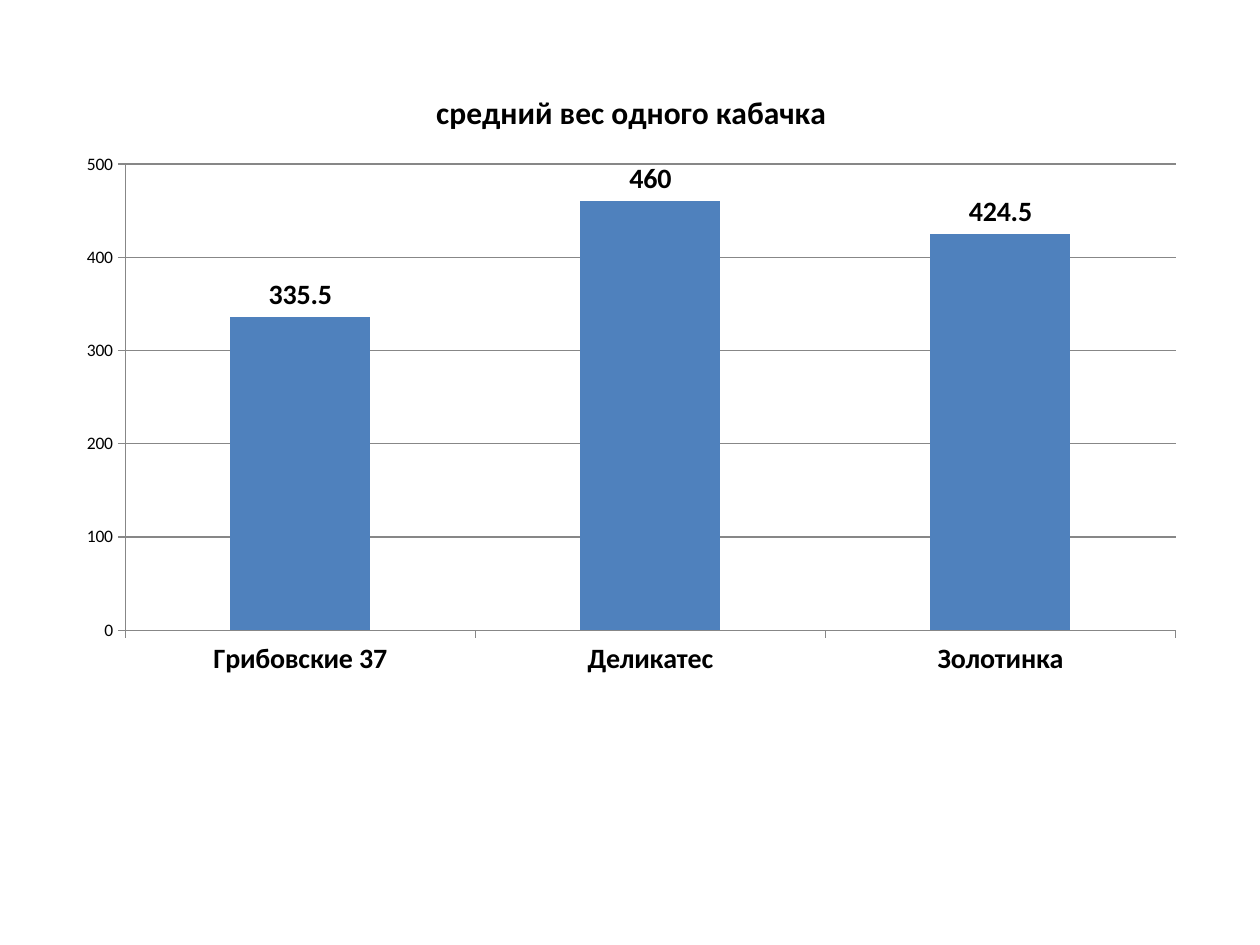
import pptx
import pptx.chart.data
import pptx.dml.color
import pptx.enum.chart
import pptx.util

TITLE = "средний вес одного кабачка"
DATA = {"Грибовские 37": 335.5, "Деликатес": 460, "Золотинка": 424.5}
BOX = (0.51, 0.52, 9, 4.95)
TOP, STEP = 500, 100
FACE = "Calibri"
HUES = {"text": "000000", "bar": "4F81BD", "line": "878787"}


def tint(name):
    return pptx.dml.color.RGBColor.from_string(HUES[name])


def style(font, size, bold=False):
    font.name = FACE
    font.size = pptx.util.Pt(size)
    font.bold = bold
    font.color.rgb = tint("text")


def write(frame, text, **form):
    frame.text = text
    style(frame.paragraphs[0].runs[0].font, **form)


def rule(line):
    line.color.rgb = tint("line")
    line.width = pptx.util.Pt(0.75)


def plot(slide):
    kinds = pptx.enum.chart
    data = pptx.chart.data.CategoryChartData()
    data.categories = list(DATA)
    data.add_series(TITLE, list(DATA.values()))
    place = [pptx.util.Inches(n) for n in BOX]
    chart = slide.shapes.add_chart(
        kinds.XL_CHART_TYPE.COLUMN_CLUSTERED, *place, data
    ).chart
    style(chart.font, 10)
    chart.has_legend = False
    chart.has_title = True
    write(chart.chart_title.text_frame, TITLE, size=18, bold=True)
    chart.chart_title.include_in_layout = False

    for axis, size, bold in (
        (chart.category_axis, 16, True),
        (chart.value_axis, 10, False),
    ):
        style(axis.tick_labels.font, size, bold)
        axis.major_tick_mark = kinds.XL_TICK_MARK.OUTSIDE
        axis.minor_tick_mark = kinds.XL_TICK_MARK.NONE
        rule(axis.format.line)

    scale = chart.value_axis
    scale.minimum_scale, scale.maximum_scale = 0, TOP
    scale.major_unit = STEP
    scale.has_major_gridlines = True
    rule(scale.major_gridlines.format.line)

    bars = chart.plots[0]
    bars.gap_width = 150
    bars.vary_by_categories = False
    fill = bars.series[0].format.fill
    fill.solid()
    fill.fore_color.rgb = tint("bar")
    bars.has_data_labels = True
    labels = bars.data_labels
    labels.show_value = True
    labels.position = kinds.XL_LABEL_POSITION.OUTSIDE_END
    style(labels.font, 16, True)


def main():
    deck = pptx.Presentation()
    deck.slide_width = pptx.util.Inches(10)
    deck.slide_height = pptx.util.Inches(7.5)
    plot(deck.slides.add_slide(deck.slide_layouts[6]))
    deck.save("out.pptx")


if __name__ == "__main__":
    main()
